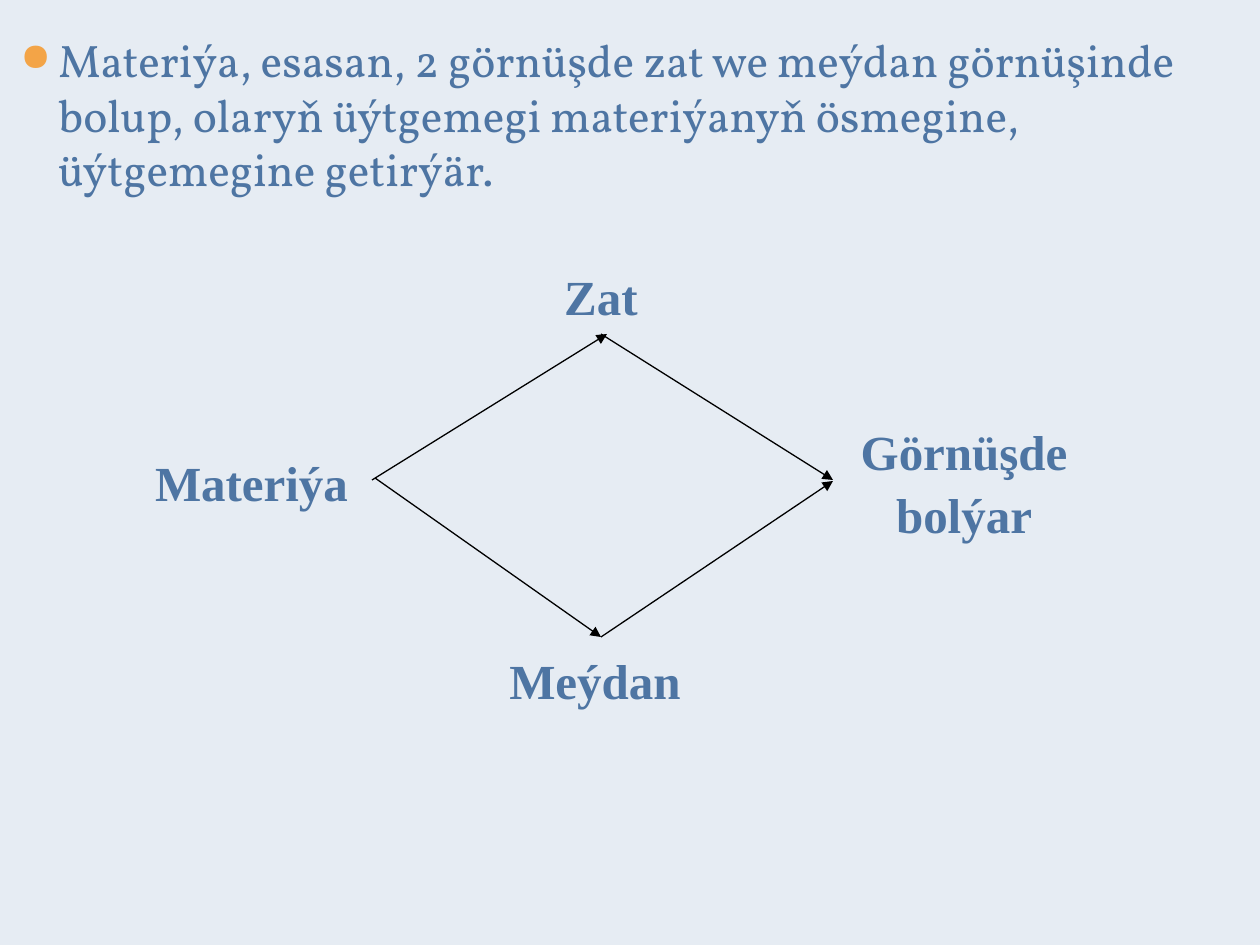
from lxml import etree
from pptx import Presentation
from pptx.dml.color import RGBColor
from pptx.enum.shapes import MSO_CONNECTOR
from pptx.enum.text import MSO_ANCHOR, PP_ALIGN
from pptx.oxml.ns import qn
from pptx.util import Pt

EMU_PER_PX = 914400 / 126
STRAIGHT = MSO_CONNECTOR.STRAIGHT
TOP, MIDDLE = MSO_ANCHOR.TOP, MSO_ANCHOR.MIDDLE
LEFT, CENTER = PP_ALIGN.LEFT, PP_ALIGN.CENTER
COLORS = {"background": "E6ECF3", "text": "4E75A3", "bullet": "F3A447", "arrow": "000000"}

STATEMENT = ("Materiýa, esasan, 2 görnüşde zat we meýdan görnüşinde bolup, "
             "olaryň üýtgemegi materiýanyň ösmegine, üýtgemegine getirýär.")

# Text, left, top, width, height
LABELS = [
    ("Zat", 500, 255, 202, 79),
    ("Materiýa", 131, 441, 241, 79),
    ("Görnüşde bolýar", 842, 413, 244, 135),
    ("Meýdan", 494, 639, 202, 79),
]

# Start and end points
ARROWS = [
    ((372, 480), (607, 334)),
    ((375, 478), (601, 637)),
    ((601, 334), (833, 480)),
    ((601, 637), (833, 481)),
]


def px(length):
    return round(length * EMU_PER_PX)


def color(name):
    return RGBColor.from_string(COLORS[name])


def add_text(slide, text, box, font_name, size, anchor, alignment):
    shape = slide.shapes.add_textbox(*map(px, box))
    frame = shape.text_frame
    frame.word_wrap = True
    frame.vertical_anchor = anchor
    frame.text = text
    paragraph = frame.paragraphs[0]
    paragraph.alignment = alignment
    font = paragraph.runs[0].font
    font.name = font_name
    font.size = Pt(size)
    font.color.rgb = color("text")
    return paragraph


def add_label(slide, text, *box):
    paragraph = add_text(slide, text, box, "Times New Roman", 28, MIDDLE, CENTER)
    paragraph.line_spacing = 1.06
    paragraph.runs[0].font.bold = True


def add_bullet_text(slide, text, *box):
    paragraph = add_text(slide, text, box, "Vollkorn", 26, TOP, LEFT)
    properties = paragraph._p.get_or_add_pPr()
    properties.set("marL", str(px(38)))
    properties.set("indent", str(px(-38)))
    bullet_color = etree.SubElement(properties, qn("a:buClr"))
    etree.SubElement(bullet_color, qn("a:srgbClr"), val=COLORS["bullet"])
    etree.SubElement(properties, qn("a:buSzPct"), val="85000")
    etree.SubElement(properties, qn("a:buChar"), char="●")


def add_arrow(slide, start, end):
    connector = slide.shapes.add_connector(STRAIGHT, *map(px, start + end))
    connector.line.width = Pt(0.75)
    connector.line.color.rgb = color("arrow")
    etree.SubElement(connector.line._get_or_add_ln(), qn("a:tailEnd"), type="triangle")
    etree.SubElement(connector._element.spPr, qn("a:effectLst"))


def main():
    presentation = Presentation()
    presentation.slide_width = px(1260)
    presentation.slide_height = px(945)
    slide = presentation.slides.add_slide(presentation.slide_layouts[6])
    slide.background.fill.solid()
    slide.background.fill.fore_color.rgb = color("background")

    # Diagram
    for label in LABELS:
        add_label(slide, *label)
    for start, end in ARROWS:
        add_arrow(slide, start, end)

    # Statement
    add_bullet_text(slide, STATEMENT, 8, 26, 1244, 181)

    presentation.save("out.pptx")


if __name__ == "__main__":
    main()
